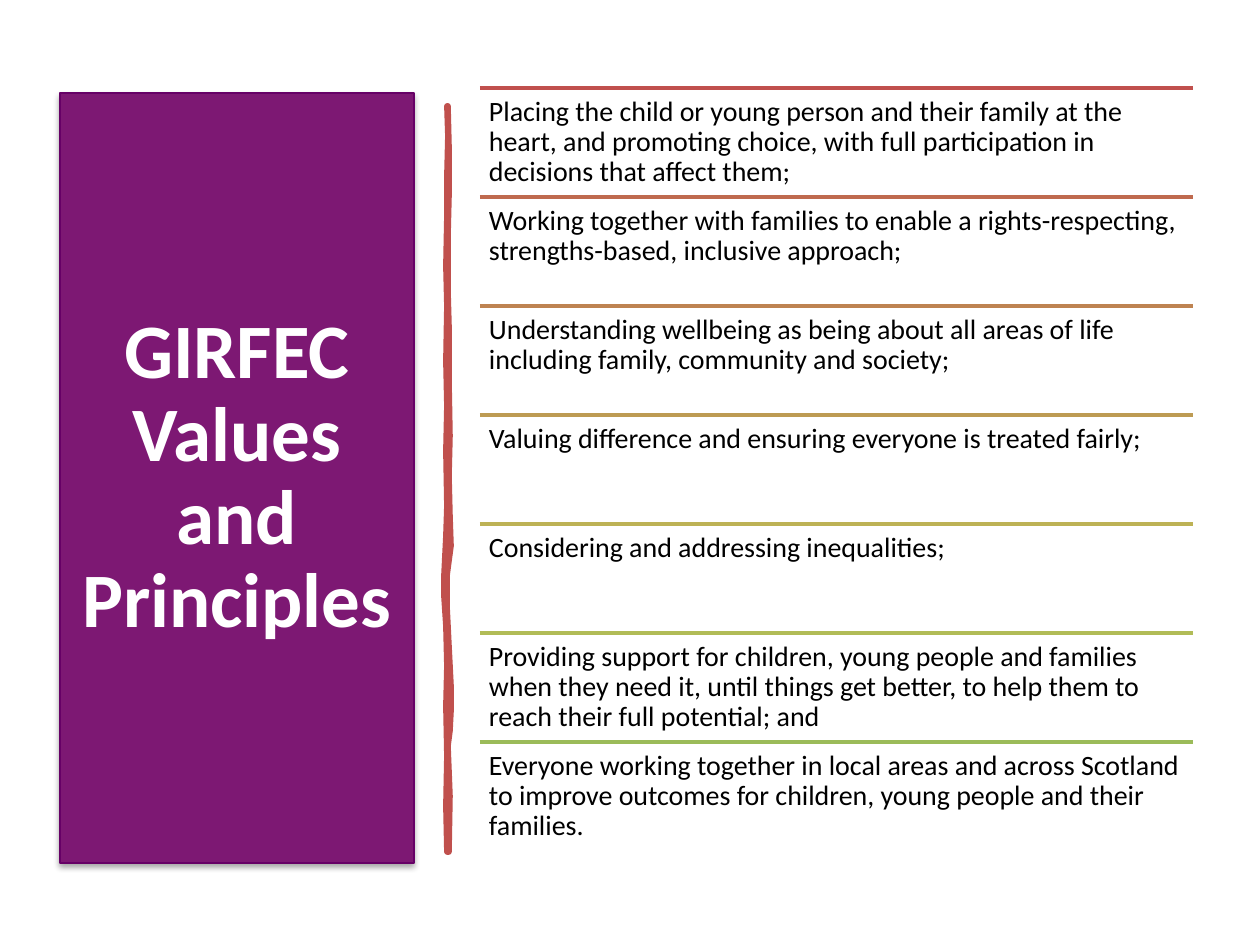
from lxml import etree
from pptx import Presentation
from pptx.dml.color import RGBColor
from pptx.enum.shapes import MSO_CONNECTOR as CONN, MSO_SHAPE as SHAPE
from pptx.enum.text import MSO_ANCHOR as ANCHOR, PP_ALIGN as ALIGN
from pptx.oxml import parse_xml
from pptx.oxml.ns import qn
from pptx.util import Inches, Pt

SCALE = Inches(1) / 126
A_NS = "http://schemas.openxmlformats.org/drawingml/2006/main"
TITLE = "GIRFEC Values and Principles"
PRINCIPLES = [
    ("C0504D", "Placing the child or young person and their family at the heart, "
               "and promoting choice, with full participation in decisions that affect them;"),
    ("BF6A4F", "Working together with families to enable a rights-respecting, "
               "strengths-based, inclusive approach;"),
    ("BE8351", "Understanding wellbeing as being about all areas of life "
               "including family, community and society;"),
    ("BD9B53", "Valuing difference and ensuring everyone is treated fairly;"),
    ("BDB255", "Considering and addressing inequalities;"),
    ("B1BC57", "Providing support for children, young people and families when they need it, "
               "until things get better, to help them to reach their full potential; and"),
    ("9BBB59", "Everyone working together in local areas and across Scotland "
               "to improve outcomes for children, young people and their families."),
]
BAR_RIGHT = [(6, 0), (7, 40), (7, 90), (6, 130), (6, 185), (7, 220), (7, 275),
             (8, 330), (7, 370), (8, 410), (9, 440), (7, 455), (5, 470), (5, 500),
             (7, 540), (9, 580), (9, 605), (8, 625), (6, 640), (8, 690), (7, 746)]
BAR_LEFT = [(5, 746), (4, 700), (5, 650), (4, 600), (5, 560), (4, 520), (2, 490),
            (2, 470), (4, 430), (5, 400), (4, 345), (5, 300), (4, 255), (5, 200),
            (4, 160), (5, 110), (5, 70), (6, 30), (5, 0)]


def px(n):
    return round(n * SCALE)


def rgb(color):
    return RGBColor.from_string(color)


def set_line(sp, color, width):
    sp.line.color.rgb = rgb(color)
    sp.line.width = Pt(width)


def write(sp, text, color, frame, para, font):
    tf = sp.text_frame
    p = tf.paragraphs[0]
    r = p.add_run()
    r.text = text
    r.font.color.rgb = rgb(color)
    formats = [(tf, {"word_wrap": True, **frame}),
               (p, {"line_spacing": 0.9, **para}),
               (r.font, {"name": "Calibri", **font})]
    for target, values in formats:
        for name, value in values.items():
            setattr(target, name, value)


def add_title_panel(s, x, y, w, h):
    sp = s.shapes.add_shape(SHAPE.RECTANGLE, px(x), px(y), px(w), px(h))
    sp.fill.solid()
    sp.fill.fore_color.rgb = rgb("7D1873")
    set_line(sp, "660066", 0.75)
    sp.shadow.inherit = False
    effects = sp._element.spPr.find(qn("a:effectLst"))
    effects.append(parse_xml(
        f'<a:outerShdw xmlns:a="{A_NS}" blurRad="{Pt(3.1)}" dist="{Pt(1.8)}" dir="5400000" '
        'rotWithShape="0"><a:srgbClr val="000000"><a:alpha val="35000"/></a:srgbClr></a:outerShdw>'))
    write(sp, TITLE, "FFFFFF", {"vertical_anchor": ANCHOR.MIDDLE},
          {"alignment": ALIGN.CENTER}, {"size": Pt(44), "bold": True})


def add_brush_bar(s, x, y):
    points = [(x + dx, y + dy) for dx, dy in BAR_RIGHT + BAR_LEFT]
    builder = s.shapes.build_freeform(*points[0], scale=SCALE)
    builder.add_line_segments(points[1:], close=True)
    sp = builder.convert_to_shape()
    sp.fill.solid()
    sp.fill.fore_color.rgb = rgb("C0504D")
    set_line(sp, "C0504D", 3.25)
    etree.SubElement(sp.line._get_or_add_ln(), qn("a:round"))
    sp.shadow.inherit = False


def add_principles(s, x, y, w, row_h):
    group = s.shapes.add_group_shape()
    margins = dict.fromkeys(
        ("margin_left", "margin_top", "margin_right", "margin_bottom"), px(9))
    for i, (color, text) in enumerate(PRINCIPLES):
        top = y + i * row_h
        rule = group.shapes.add_connector(CONN.STRAIGHT, px(x), px(top), px(x + w), px(top))
        set_line(rule, color, 2)
        etree.SubElement(rule._element.spPr, qn("a:effectLst"))
        box = group.shapes.add_textbox(px(x), px(top), px(w), px(row_h))
        write(box, text, "000000", margins, {}, {"size": Pt(16)})


def main():
    prs = Presentation()
    prs.slide_width, prs.slide_height = Inches(10), Inches(7.5)
    s = prs.slides.add_slide(prs.slide_layouts[6])
    add_brush_bar(s, 442, 106)
    add_principles(s, 480, 88, 713, 109)
    add_title_panel(s, 60, 93, 354, 770)
    prs.save("out.pptx")


if __name__ == "__main__":
    main()
